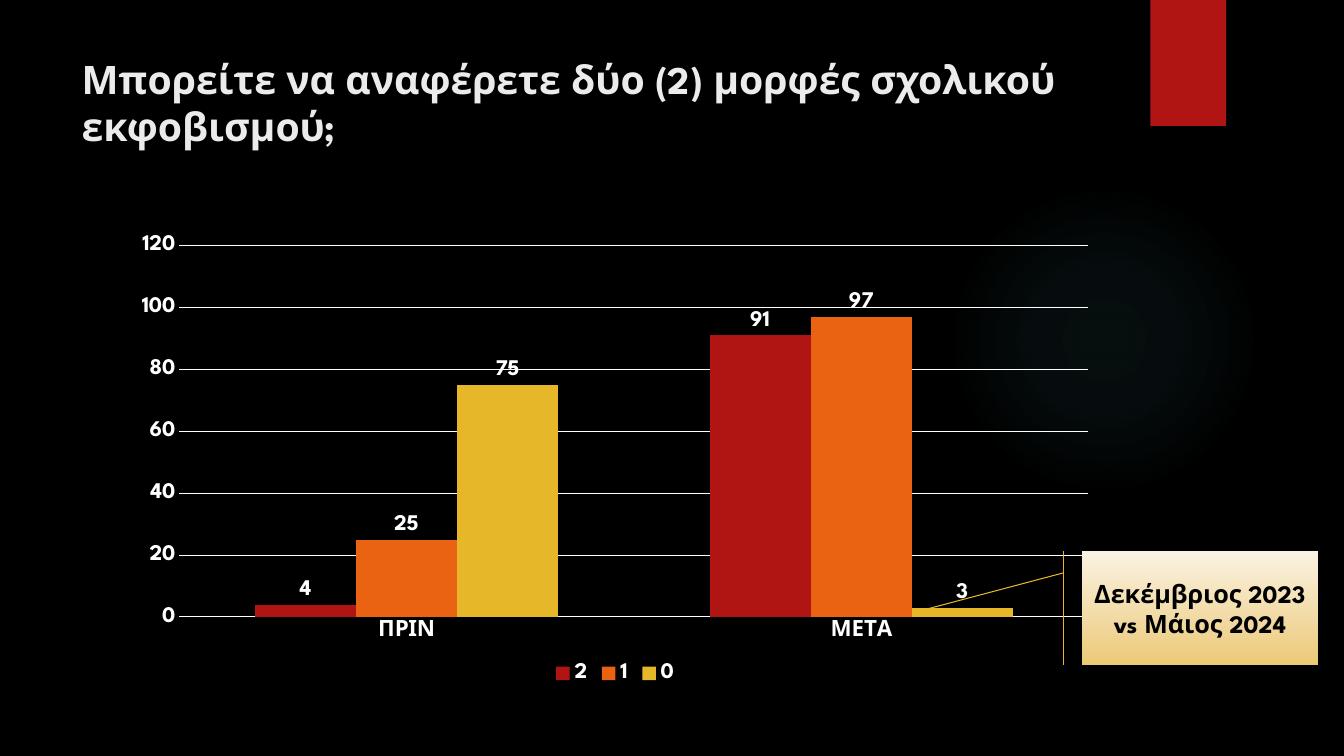
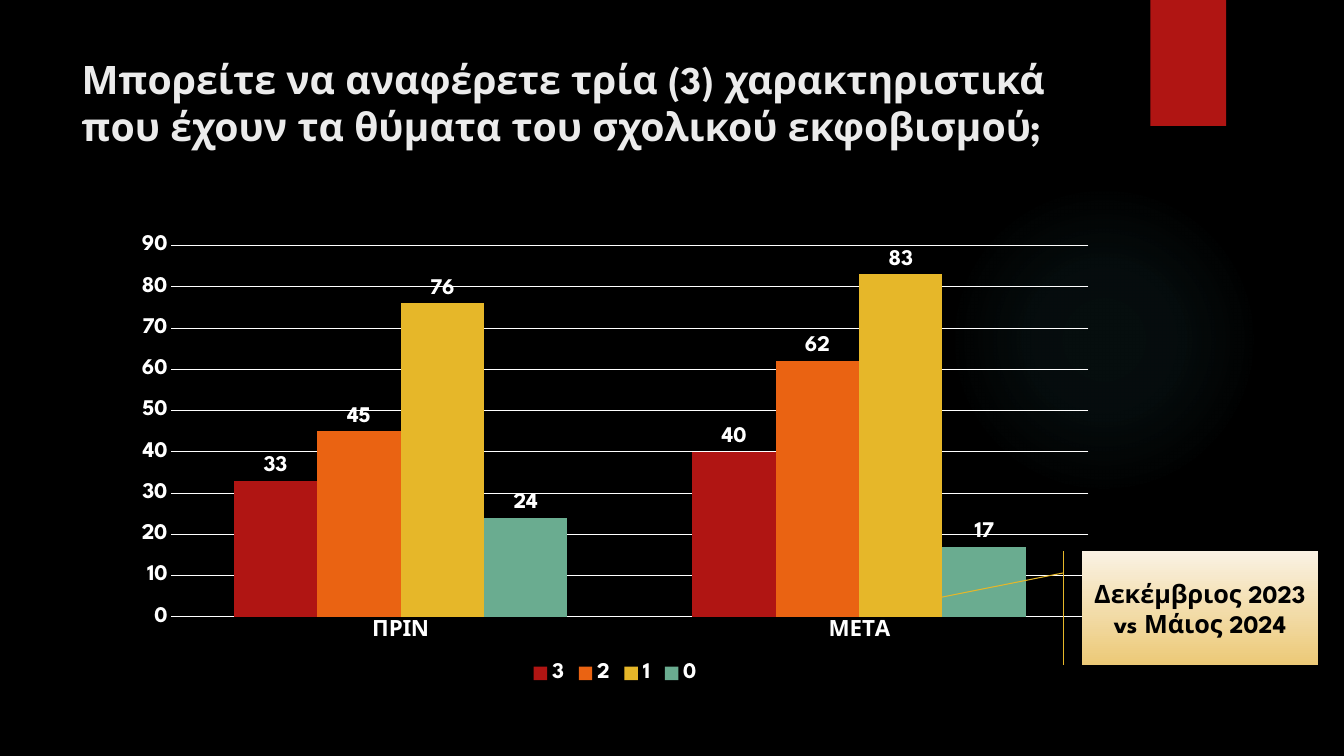
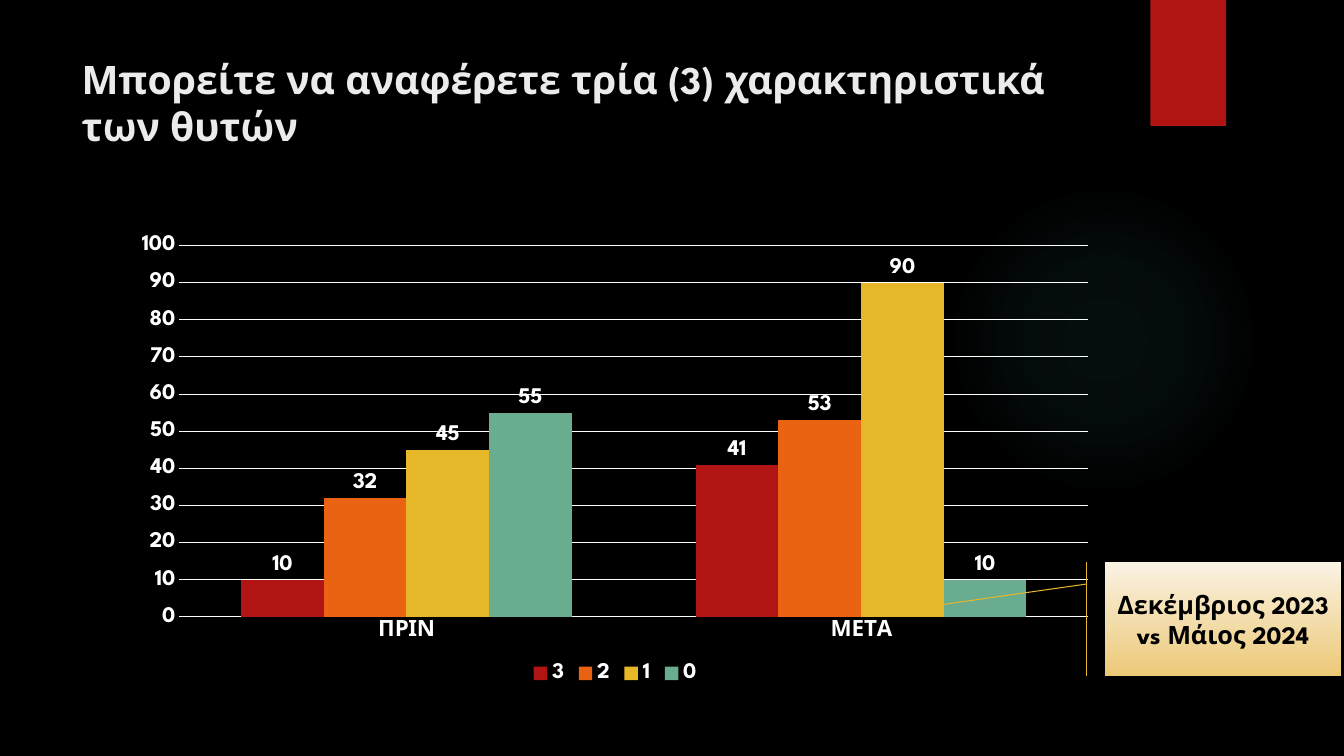
from lxml.etree import SubElement
from pptx import Presentation
from pptx.chart.data import CategoryChartData
from pptx.dml.color import RGBColor
from pptx.enum.chart import XL_CHART_TYPE, XL_LABEL_POSITION, XL_LEGEND_POSITION, XL_TICK_MARK
from pptx.enum.shapes import MSO_SHAPE
from pptx.enum.text import MSO_ANCHOR, MSO_AUTO_SIZE, PP_ALIGN
from pptx.oxml.ns import qn
from pptx.util import Inches, Pt

WIDTH, HEIGHT = Inches(13.33), Inches(7.5)
FONT = "League Spartan"
BLACK, WHITE, TITLE_GREY = "000000", "FFFFFF", "EBEBEB"
RED, ORANGE, YELLOW, GREEN = SERIES_COLORS = ("B01513", "EA6312", "E6B729", "6AAC90")
GLOW_STOPS = [(0, "50B9C1", 7), (36, "50B9C1", 6), (69, "50B9C1", 0)]
CALLOUT_STOPS = [(0, "FAF2E3", 100), (100, "ECC977", 100)]
CATEGORIES = ("ΠΡΙΝ", "ΜΕΤΑ")
PERIOD = "Δεκέμβριος 2023 vs Μάιος 2024"

TITLE_BOX = (5.33, 6.67, 77.19, 20.4)
CHART_BOX = (9.08, 29.87, 73.37, 61.2)
GLOW_BOX = (70.59, 24.4, 23.11, 41.07)
BAND_BOX = (85.6, 0, 5.63, 16.67)
CALLOUT_SIZE = (17.55, 15.07)

QUESTIONS = [
    {
        "title": "Μπορείτε να αναφέρετε δύο (2) μορφές σχολικού εκφοβισμού;",
        "answers": {"2": (4, 91), "1": (25, 97), "0": (75, 3)},
        "callout": (80.5, 72.93),
        "pointer": (0.53, -0.7),
    },
    {
        "title": "Μπορείτε να αναφέρετε τρία (3) χαρακτηριστικά που έχουν τα θύματα του σχολικού εκφοβισμού;",
        "answers": {"3": (33, 40), "2": (45, 62), "1": (76, 83), "0": (24, 17)},
        "callout": (80.5, 72.93),
        "pointer": (0.52, -0.88),
    },
    {
        "title": "Μπορείτε να αναφέρετε τρία (3) χαρακτηριστικά των θυτών",
        "answers": {"3": (10, 41), "2": (32, 53), "1": (45, 90), "0": (55, 10)},
        "callout": (82.22, 74.4),
        "pointer": (0.47, -1.03),
    },
]


def rgb(color):
    """Turn a hex string into a colour."""
    return RGBColor.from_string(color)


def share(left, top, width, height):
    """Turn percentages of the slide into lengths."""
    return (
        int(WIDTH * left / 100),
        int(HEIGHT * top / 100),
        int(WIDTH * width / 100),
        int(HEIGHT * height / 100),
    )


def set_font(font, size, color):
    """Apply the shared bold typeface."""
    font.name = FONT
    font.size = Pt(size)
    font.bold = True
    font.color.rgb = rgb(color)


def fill_gradient(shape, stops, circular=False):
    """Fill a shape with a downward or circular gradient of (position, colour, opacity) stops."""
    shape.fill.background()
    properties = shape.element.spPr
    empty_fill = properties.find(qn("a:noFill"))
    gradient = properties.makeelement(qn("a:gradFill"), {"rotWithShape": "1"})
    properties.replace(empty_fill, gradient)
    stop_list = SubElement(gradient, qn("a:gsLst"))
    for position, color, opacity in stops:
        stop = SubElement(stop_list, qn("a:gs"), pos=str(position * 1000))
        stop_color = SubElement(stop, qn("a:srgbClr"), val=color)
        if opacity < 100:
            SubElement(stop_color, qn("a:alpha"), val=str(opacity * 1000))
    if circular:
        circle = SubElement(gradient, qn("a:path"), path="circle")
        SubElement(circle, qn("a:fillToRect"), dict.fromkeys("ltrb", "50000"))
    else:
        SubElement(gradient, qn("a:lin"), ang="5400000", scaled="0")


def add_plain_shape(slide, kind, box):
    """Add a preset shape with neither line nor shadow."""
    shape = slide.shapes.add_shape(kind, *share(*box))
    shape.shadow.inherit = False
    shape.line.fill.background()
    return shape


def decorate_layout(layout, slide):
    """Draw the glow and the red band, and hand them to the layout."""
    glow = add_plain_shape(slide, MSO_SHAPE.OVAL, GLOW_BOX)
    fill_gradient(glow, GLOW_STOPS, circular=True)
    band = add_plain_shape(slide, MSO_SHAPE.RECTANGLE, BAND_BOX)
    band.fill.solid()
    band.fill.fore_color.rgb = rgb(RED)
    for shape in (glow, band):
        layout.shapes.element.append(shape.element)


def set_title(slide, text):
    """Place and format the slide title."""
    title = slide.shapes.title
    title.left, title.top, title.width, title.height = share(*TITLE_BOX)
    frame = title.text_frame
    frame.text = text
    frame.word_wrap = True
    frame.auto_size = MSO_AUTO_SIZE.NONE
    frame.vertical_anchor = MSO_ANCHOR.TOP
    paragraph = frame.paragraphs[0]
    paragraph.alignment = PP_ALIGN.LEFT
    set_font(paragraph.font, 28, TITLE_GREY)


def add_answer_chart(slide, answers):
    """Add the clustered columns that compare answers before and after."""
    data = CategoryChartData()
    data.categories = CATEGORIES
    for name, values in answers.items():
        data.add_series(name, values)
    chart = slide.shapes.add_chart(XL_CHART_TYPE.COLUMN_CLUSTERED, *share(*CHART_BOX), data).chart
    chart.has_title = False
    set_font(chart.font, 16, WHITE)
    chart.has_legend = True
    chart.legend.position = XL_LEGEND_POSITION.BOTTOM
    chart.legend.include_in_layout = False
    set_font(chart.legend.font, 16, WHITE)
    for axis in (chart.category_axis, chart.value_axis):
        axis.major_tick_mark = axis.minor_tick_mark = XL_TICK_MARK.NONE
        axis.format.line.fill.background()
        set_font(axis.tick_labels.font, 16, WHITE)
    gridline = chart.value_axis.major_gridlines.format.line
    gridline.color.rgb = rgb(WHITE)
    gridline.width = Pt(0.75)
    plot = chart.plots[0]
    plot.gap_width = 150
    plot.overlap = 0
    plot.vary_by_categories = False
    for series, color in zip(plot.series, SERIES_COLORS):
        series.format.fill.solid()
        series.format.fill.fore_color.rgb = rgb(color)
        labels = series.data_labels
        labels.show_value = True
        labels.position = XL_LABEL_POSITION.OUTSIDE_END
        set_font(labels.font, 16, WHITE)


def add_period_callout(slide, corner, pointer):
    """Add the callout that names the compared months."""
    callout = add_plain_shape(slide, MSO_SHAPE.LINE_CALLOUT_1_ACCENT_BAR, (*corner, *CALLOUT_SIZE))
    for index, value in enumerate((0.19, -0.08, *pointer)):
        callout.adjustments[index] = value
    fill_gradient(callout, CALLOUT_STOPS)
    callout.line.color.rgb = rgb(YELLOW)
    callout.line.width = Pt(0.75)
    frame = callout.text_frame
    frame.text = PERIOD
    frame.word_wrap = True
    frame.vertical_anchor = MSO_ANCHOR.MIDDLE
    paragraph = frame.paragraphs[0]
    paragraph.alignment = PP_ALIGN.CENTER
    set_font(paragraph.font, 18, BLACK)


def main():
    """Build one slide for each survey question."""
    presentation = Presentation()
    presentation.slide_width, presentation.slide_height = WIDTH, HEIGHT
    background = presentation.slide_master.background.fill
    background.solid()
    background.fore_color.rgb = rgb(BLACK)
    layout = presentation.slide_layouts[5]
    for question in QUESTIONS:
        slide = presentation.slides.add_slide(layout)
        set_title(slide, question["title"])
        add_answer_chart(slide, question["answers"])
        add_period_callout(slide, question["callout"], question["pointer"])
    decorate_layout(layout, presentation.slides[0])
    presentation.save("out.pptx")


if __name__ == "__main__":
    main()
